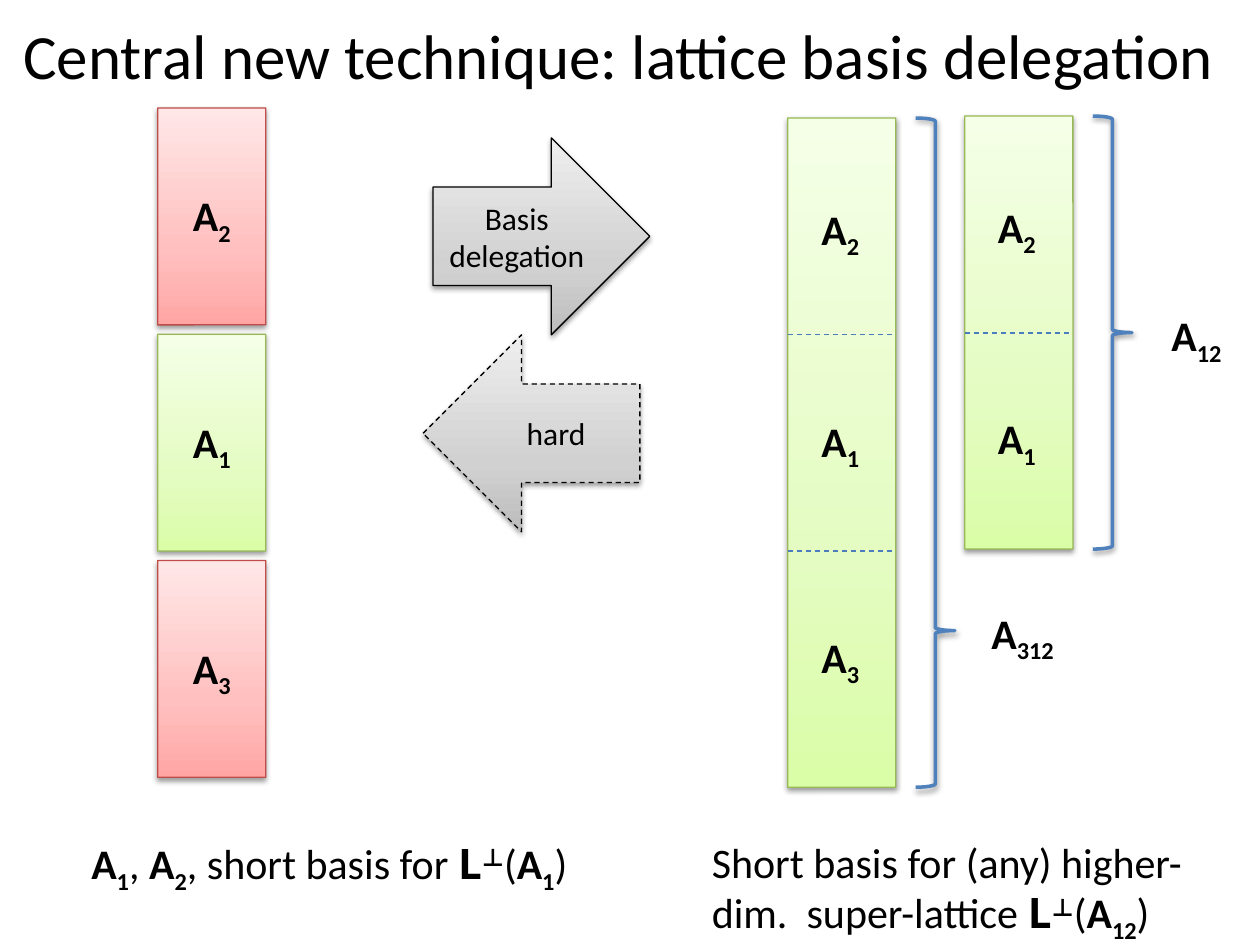
from dataclasses import dataclass
from typing import Any

from lxml.etree import SubElement
from pptx import Presentation
from pptx.dml.color import RGBColor
from pptx.enum.dml import MSO_LINE
from pptx.enum.shapes import MSO_CONNECTOR, MSO_SHAPE
from pptx.enum.text import MSO_ANCHOR, MSO_AUTO_SIZE, PP_ALIGN
from pptx.oxml.ns import qn
from pptx.util import Cm, Pt

BLACK = RGBColor(0x00, 0x00, 0x00)
BLUE = RGBColor(0x4F, 0x81, 0xBD)
DASH = RGBColor(0x4B, 0x7E, 0xBC)


@dataclass(frozen=True)
class Look:
    stops: tuple[RGBColor, RGBColor, RGBColor]
    edge: RGBColor


@dataclass(frozen=True)
class Block:
    index: str
    top: float
    look: Look


@dataclass(frozen=True)
class Arrow:
    kind: Any
    text: str
    left: float
    top: float
    dashed: bool


@dataclass(frozen=True)
class Label:
    index: str
    left: float
    top: float
    width: float


@dataclass(frozen=True)
class Stack:
    left: float
    top: float
    height: float
    point: float
    labels: tuple[Label, ...]
    cuts: tuple[float, ...]


GREEN = Look((RGBColor(0xDA, 0xFD, 0xA7), RGBColor(0xE4, 0xFC, 0xC2),
              RGBColor(0xF5, 0xFF, 0xE7)), RGBColor(0x98, 0xB9, 0x55))
RED = Look((RGBColor(0xFF, 0xA6, 0xA5), RGBColor(0xFF, 0xC0, 0xBF),
            RGBColor(0xFF, 0xE7, 0xE7)), RGBColor(0xBF, 0x4C, 0x48))
GREY = Look((RGBColor(0xBD, 0xBD, 0xBD), RGBColor(0xD1, 0xD1, 0xD1),
             RGBColor(0xEE, 0xEE, 0xEE)), BLACK)

WIDE, TALL = 2.18, 4.37
STEP = 4.56
FIRST = 2.18

BLOCKS = [Block(index, FIRST + row * STEP, look)
          for row, (index, look) in enumerate([("2", RED), ("1", GREEN), ("3", RED)])]
ARROWS = [
    Arrow(MSO_SHAPE.RIGHT_ARROW, "Basis delegation", 8.73, 2.78, False),
    Arrow(MSO_SHAPE.LEFT_ARROW, "hard", 8.53, 6.75, True),
]
STACKS = [
    Stack(19.45, 2.34, 8.73, 0.5,
          (Label("2", 19.84, 3.93, 1.32), Label("1", 19.84, 8.2, 1.32),
           Label("12", 23.32, 6.12, 1.6)), (6.71,)),
    Stack(15.88, 2.38, 13.49, 0.766,
          (Label("2", 16.28, 3.97, 1.32), Label("1", 16.28, 8.25, 1.32),
           Label("3", 16.28, 12.6, 1.32), Label("312", 19.66, 12.12, 1.91)),
          (6.75, 11.11)),
]


def write(frame, parts, size=24, align=PP_ALIGN.LEFT, anchor=MSO_ANCHOR.TOP,
          wrap=True, grow=False) -> None:
    """Write (text, marks) parts; marks: b bold, - sub, + super, o Open Sans."""
    frame.word_wrap = wrap
    frame.vertical_anchor = anchor
    frame.auto_size = MSO_AUTO_SIZE.SHAPE_TO_FIT_TEXT if grow else MSO_AUTO_SIZE.NONE
    para = frame.paragraphs[0]
    para.alignment = align
    for text, marks in parts:
        run = para.add_run()
        run.text = text
        font = run.font
        font.size = Pt(size)
        font.name = "Open Sans" if "o" in marks else "Calibri"
        font.bold = "b" in marks
        font.color.rgb = BLACK
        for mark, base in (("-", "-25000"), ("+", "30000")):
            if mark in marks:
                run._r.get_or_add_rPr().set("baseline", base)


def matrix(index: str) -> list[tuple[str, str]]:
    return [("A", "b"), (index, "b-")]


def lattice(index: str) -> list[tuple[str, str]]:
    return [("L", "bo"), ("⊥", "bo+"), ("(", ""), *matrix(index), (")", "")]


def shade(shape) -> None:
    shape.shadow.inherit = False
    effects = shape._element.spPr.find(qn("a:effectLst"))
    outer = SubElement(effects, qn("a:outerShdw"), blurRad=str(Pt(3.1)),
                       dist=str(Pt(1.6)), dir="5400000", rotWithShape="0")
    tone = SubElement(outer, qn("a:srgbClr"), val=str(BLACK))
    SubElement(tone, qn("a:alpha"), val="38000")


def paint(shape, look: Look) -> None:
    """Give a shape its three-stop gradient, edge and shadow."""
    shape.fill.gradient()
    shape.fill.gradient_angle = 90
    stops = shape._element.spPr.find(".//" + qn("a:gsLst"))
    for old in list(stops):
        stops.remove(old)
    for place, color in zip((0, 35000, 100000), look.stops):
        stop = SubElement(stops, qn("a:gs"), pos=str(place))
        SubElement(stop, qn("a:srgbClr"), val=str(color))
    shape.line.color.rgb = look.edge
    shape.line.width = Pt(0.75)
    shade(shape)


def add_bar(shapes, left: float, top: float, height: float, look: Look):
    bar = shapes.add_shape(MSO_SHAPE.ROUNDED_RECTANGLE, Cm(left), Cm(top),
                           Cm(WIDE), Cm(height))
    bar.adjustments[0] = 0.001
    paint(bar, look)
    return bar


def add_block(shapes, block: Block) -> None:
    frame = add_bar(shapes, 3.18, block.top, TALL, block.look).text_frame
    frame.margin_top, frame.margin_bottom = Cm(0.18), Cm(0.1)
    write(frame, matrix(block.index), align=PP_ALIGN.CENTER, anchor=MSO_ANCHOR.MIDDLE)


def add_arrow(shapes, arrow: Arrow) -> None:
    shape = shapes.add_shape(arrow.kind, Cm(arrow.left), Cm(arrow.top), Cm(4.37), Cm(3.97))
    paint(shape, GREY)
    if arrow.dashed:
        shape.line.dash_style = MSO_LINE.DASH
    write(shape.text_frame, [(arrow.text, "")], size=18,
          align=PP_ALIGN.CENTER, anchor=MSO_ANCHOR.MIDDLE)


def add_text(shapes, left: float, top: float, width: float, height: float,
             parts, **style) -> None:
    box = shapes.add_textbox(Cm(left), Cm(top), Cm(width), Cm(height))
    write(box.text_frame, parts, grow=True, **style)


def add_cut(shapes, left: float, top: float) -> None:
    line = shapes.add_connector(MSO_CONNECTOR.STRAIGHT, Cm(left), Cm(top),
                                Cm(left + WIDE), Cm(top))
    line.line.color.rgb = DASH
    line.line.width = Pt(0.75)
    line.line.dash_style = MSO_LINE.DASH
    SubElement(line._element.spPr, qn("a:effectLst"))


def add_stack(shapes, stack: Stack) -> None:
    group = shapes.add_group_shape().shapes
    add_bar(group, stack.left, stack.top, stack.height, GREEN)
    brace = group.add_shape(MSO_SHAPE.RIGHT_BRACE, Cm(stack.left + 2.58), Cm(stack.top),
                            Cm(0.79), Cm(stack.height))
    brace.adjustments[0], brace.adjustments[1] = 0.083, stack.point
    brace.fill.background()
    brace.line.color.rgb = BLUE
    brace.line.width = Pt(2)
    shade(brace)
    for label in stack.labels:
        add_text(group, label.left, label.top, label.width, 1.27, matrix(label.index),
                 align=PP_ALIGN.CENTER, wrap=False)
    for cut in stack.cuts:
        add_cut(group, stack.left, cut)


def main() -> None:
    deck = Presentation()
    deck.slide_width, deck.slide_height = Cm(25.4), Cm(19.05)
    slide = deck.slides.add_slide(deck.slide_layouts[5])
    shapes = slide.shapes
    title = shapes.title
    title.left, title.top, title.width, title.height = Cm(0.2), Cm(0), Cm(24.82), Cm(2.18)
    write(title.text_frame, [("Central new technique: lattice basis delegation ", "")],
          size=36, align=PP_ALIGN.CENTER, anchor=MSO_ANCHOR.MIDDLE)
    for block in BLOCKS:
        add_block(shapes, block)
    for arrow in ARROWS:
        add_arrow(shapes, arrow)
    for stack in STACKS:
        add_stack(shapes, stack)
    add_text(shapes, 1.4, 16.76, 11.91, 1.27,
             [(" A", "b"), ("1", "b-"), (", ", ""), *matrix("2"),
              (", short basis for ", ""), *lattice("1")])
    add_text(shapes, 14.1, 16.74, 11.13, 2.31,
             [("Short basis for (any) higher-dim.  super-lattice ", ""), *lattice("12")])
    deck.save("out.pptx")


if __name__ == "__main__":
    main()
